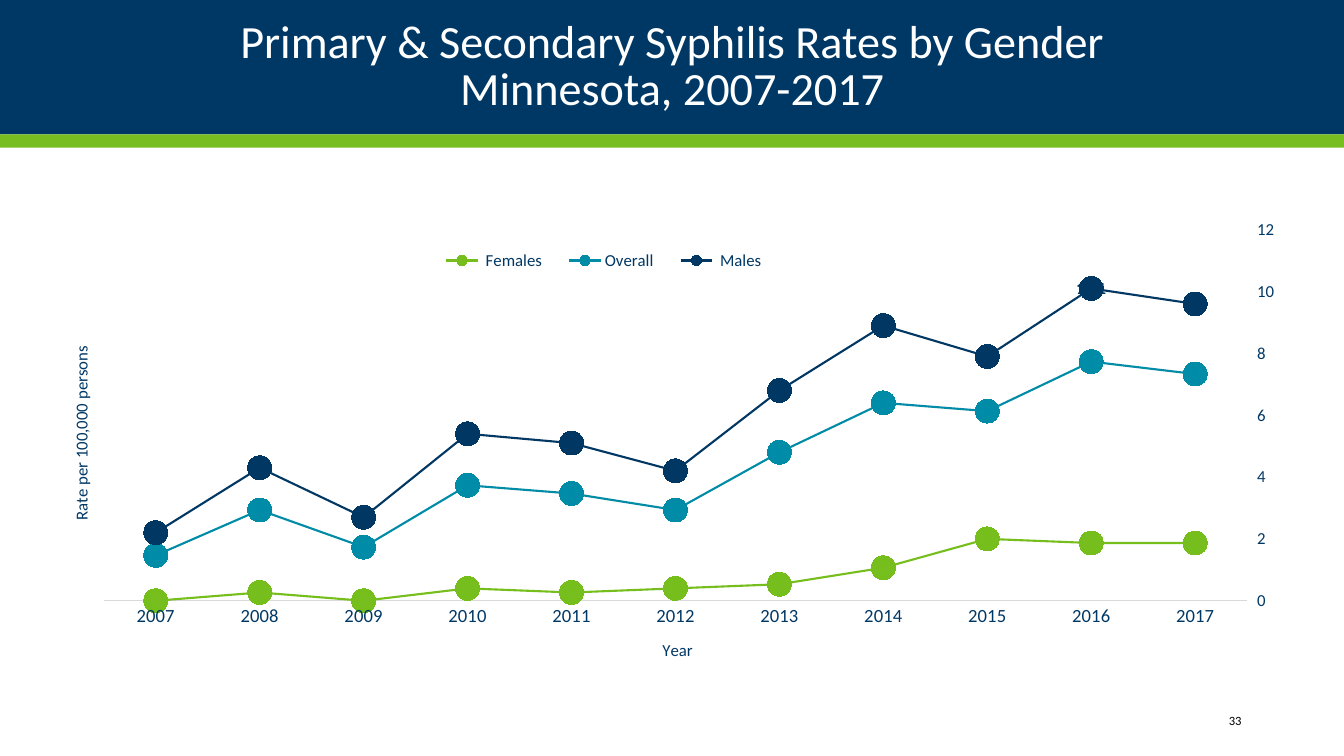
"""Build a slide with a line chart of syphilis rates by gender in Minnesota."""
from copy import deepcopy

from lxml.etree import SubElement
from pptx import Presentation
from pptx.chart.data import CategoryChartData
from pptx.dml.color import RGBColor
from pptx.enum.chart import XL_CHART_TYPE as ChartType, XL_LABEL_POSITION as LabelPosition
from pptx.enum.chart import XL_LEGEND_POSITION as LegendPosition, XL_MARKER_STYLE as MarkerStyle
from pptx.enum.chart import XL_TICK_MARK as TickMark
from pptx.enum.shapes import MSO_SHAPE as Shape
from pptx.enum.text import MSO_ANCHOR as Anchor, PP_ALIGN as Align
from pptx.oxml.ns import qn
from pptx.util import Cm, Pt

NAVY = RGBColor(0x00, 0x38, 0x65)
GREEN = RGBColor(0x78, 0xBE, 0x21)
TEAL = RGBColor(0x00, 0x8E, 0xAA)
LINE_NAVY = RGBColor(0x00, 0x37, 0x63)
LINE_GREEN = RGBColor(0x76, 0xBE, 0x1C)
LINE_TEAL = RGBColor(0x00, 0x8B, 0xA6)
AXIS_GRAY = RGBColor(0xD9, 0xD9, 0xD9)
WHITE = RGBColor(0xFF, 0xFF, 0xFF)
BLACK = RGBColor(0x00, 0x00, 0x00)
FONT = "Calibri"


def write_text(text_frame, text, size=12, color=NAVY, align=Align.CENTER, spacing=None):
    paragraph = text_frame.paragraphs[0]
    paragraph.text = text
    paragraph.alignment = align
    paragraph.line_spacing = spacing
    for run in paragraph.runs:
        run.font.name = FONT
        run.font.size = Pt(size)
        run.font.bold = False
        run.font.color.rgb = color


def set_layout(element, index, **values):
    for old_layout in element.findall(qn("c:layout")):
        element.remove(old_layout)
    layout = SubElement(element, qn("c:layout"))
    element.insert(index, layout)
    manual = SubElement(layout, qn("c:manualLayout"))
    for name, value in values.items():
        SubElement(manual, qn(f"c:{name}")).set("val", str(value))


presentation = Presentation()
presentation.slide_width = Cm(33.87)
presentation.slide_height = Cm(19.05)
slide = presentation.slides.add_slide(presentation.slide_layouts[6])

for top, height, color in ((0, 3.39, NAVY), (3.39, 0.33, GREEN)):
    band = slide.shapes.add_shape(Shape.RECTANGLE, 0, Cm(top), Cm(33.87), Cm(height))
    band.shadow.inherit = False
    band.fill.solid()
    band.fill.fore_color.rgb = color
    band.line.fill.background()

chart_data = CategoryChartData()
chart_data.categories = [str(year) for year in range(2007, 2018)]
chart_data.add_series(" Females", (0, 0.2, 0, 0.3, 0.2, 0.3, 0.4, 0.8, 1.5, 1.4, 1.4))
chart_data.add_series("Overall", (1.1, 2.2, 1.3, 2.8, 2.6, 2.2, 3.6, 4.8, 4.6, 5.8, 5.5))
chart_data.add_series(" Males", (2.2, 4.3, 2.7, 5.4, 5.1, 4.2, 6.8, 8.9, 7.9, 10.1, 9.6))
chart = slide.shapes.add_chart(
    ChartType.LINE_MARKERS, Cm(1.37), Cm(5.41), Cm(31.12), Cm(11.53), chart_data
).chart
chart.has_title = False
chart.font.name = FONT
chart.font.size = Pt(10)
chart.font.color.rgb = NAVY
chart.plots[0].vary_by_categories = False

series_colors = ((LINE_GREEN, GREEN), (LINE_TEAL, TEAL), (LINE_NAVY, NAVY))
for series, (line_color, label_color) in zip(chart.plots[0].series, series_colors):
    series.smooth = False
    series.format.line.color.rgb = line_color
    series.format.line.width = Pt(1.5)
    series.marker.style = MarkerStyle.CIRCLE
    series.marker.size = 17
    series.marker.format.fill.solid()
    series.marker.format.fill.fore_color.rgb = line_color
    series.marker.format.line.color.rgb = line_color
    labels = series.data_labels
    labels.show_value = True
    labels.position = LabelPosition.CENTER
    labels.font.name = FONT
    labels.font.size = Pt(12)
    labels.font.bold = True
    labels.font.color.rgb = label_color

chart.has_legend = True
chart.legend.position = LegendPosition.BOTTOM
chart.legend.include_in_layout = False
chart.legend.font.name = FONT
chart.legend.font.size = Pt(12)
chart.legend.font.color.rgb = NAVY
set_layout(chart.legend._element, 1, xMode="edge", yMode="edge", x=0.3, y=0.07, w=0.29, h=0.06)

year_axis, rate_axis = chart.category_axis, chart.value_axis
for axis, size in ((year_axis, 13.3), (rate_axis, 12)):
    axis.has_major_gridlines = False
    axis.tick_labels.font.name = FONT
    axis.tick_labels.font.size = Pt(size)
    axis.tick_labels.font.color.rgb = NAVY
year_axis.major_tick_mark = TickMark.NONE
year_axis.format.line.color.rgb = AXIS_GRAY
year_axis.format.line.width = Pt(0.75)
rate_axis.major_tick_mark = TickMark.OUTSIDE
rate_axis.format.line.fill.background()

plot_area = year_axis._element.getparent()
left_plot = plot_area.find(qn("c:lineChart"))
right_plot = deepcopy(left_plot)
left_plot.remove(left_plot.findall(qn("c:ser"))[2])
for series_element in right_plot.findall(qn("c:ser"))[:2]:
    right_plot.remove(series_element)
left_plot.addnext(right_plot)
for axis_id, new_id in zip(right_plot.findall(qn("c:axId")), ("5001", "5002")):
    axis_id.set("val", new_id)

right_rate = deepcopy(rate_axis._element)
right_year = deepcopy(year_axis._element)
rate_axis._element.addnext(right_rate)
right_rate.addnext(right_year)
for element, own_id, cross_id in ((right_year, "5001", "5002"), (right_rate, "5002", "5001")):
    element.find(qn("c:axId")).set("val", own_id)
    element.find(qn("c:crossAx")).set("val", cross_id)
right_year.find(qn("c:delete")).set("val", "1")
right_rate.find(qn("c:axPos")).set("val", "r")
right_rate.find(qn("c:crosses")).set("val", "max")

rate_axis.minimum_scale = 0
rate_axis.maximum_scale = 9
rate_axis.major_unit = 1
rate_axis.visible = False
axis_titles = ((year_axis, "Year", 0.49, 0.92), (rate_axis, "Rate per 100,000 persons", 0.01, 0.28))
for axis, text, x, y in axis_titles:
    write_text(axis.axis_title.text_frame, text)
    set_layout(axis.axis_title._element, 1, xMode="edge", yMode="edge", x=x, y=y)
rate_title_body = rate_axis.axis_title._element.find(".//" + qn("a:bodyPr"))
rate_title_body.set("rot", "-5400000")
rate_title_body.set("vert", "horz")
set_layout(plot_area, 0, layoutTarget="inner", xMode="edge", yMode="edge",
           x=0.04, y=0.033, w=0.926, h=0.811)

heading = "Primary & Secondary Syphilis Rates by Gender\vMinnesota, 2007-2017"
text_boxes = (
    (heading, (2.34, 0.43, 29.21, 2.54), dict(size=33, color=WHITE, spacing=0.85)),
    ("33", (27.48, 17.65, 4.06, 1.02), dict(size=9, color=BLACK, align=Align.RIGHT)),
)
for text, box, text_format in text_boxes:
    text_frame = slide.shapes.add_textbox(*map(Cm, box)).text_frame
    text_frame.word_wrap = True
    text_frame.vertical_anchor = Anchor.MIDDLE
    write_text(text_frame, text, **text_format)

presentation.save("out.pptx")
